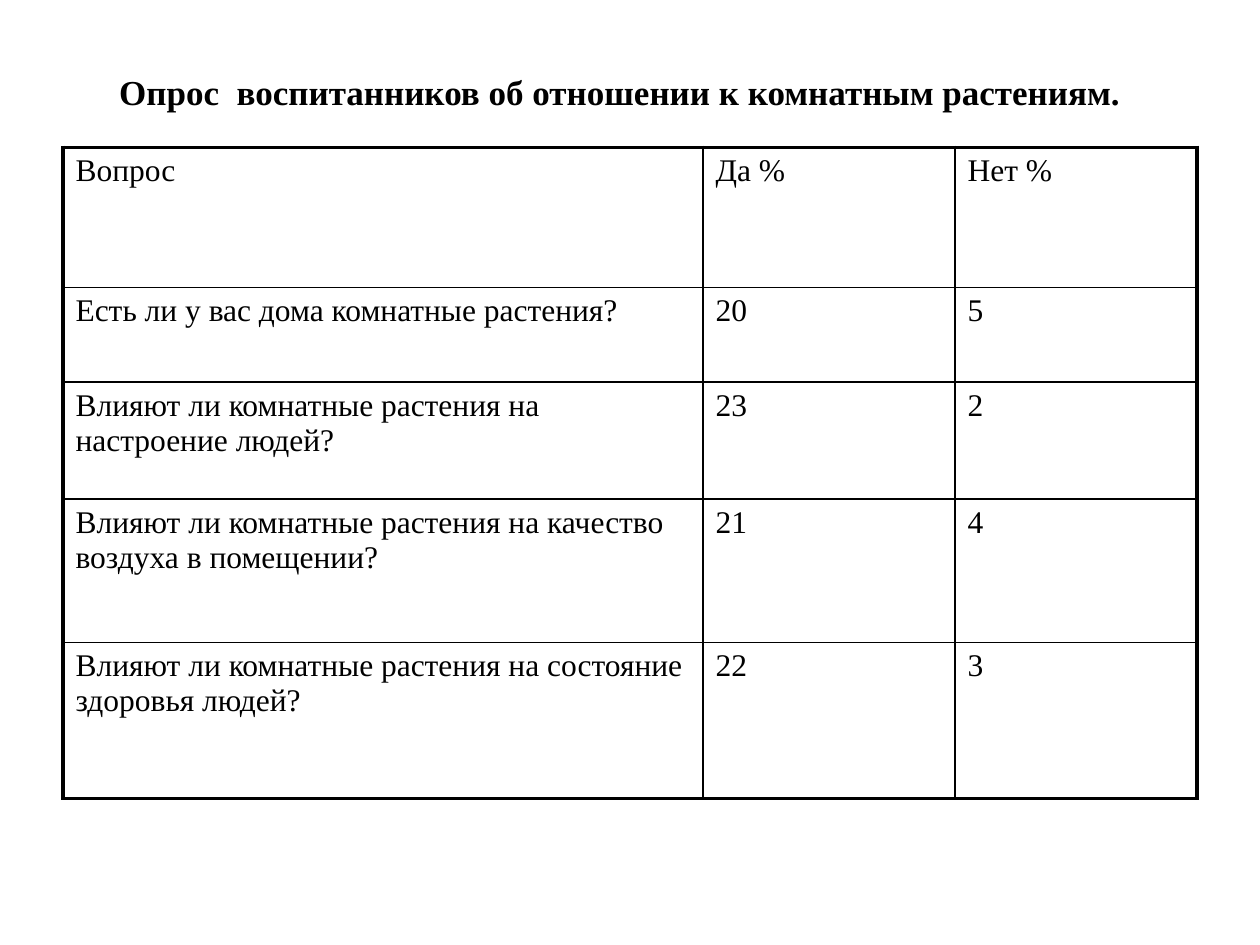
from lxml.etree import SubElement as Sub
from pptx import Presentation
from pptx.dml.color import RGBColor as Rgb
from pptx.enum.text import MSO_ANCHOR as Anchor, MSO_AUTO_SIZE as Fit, PP_ALIGN as Align
from pptx.oxml.ns import qn
from pptx.util import Inches, Pt

HUES = {"ink": "000000", "page": "FFFFFF"}
FONT = "Times New Roman"
COLS = [5.08, 2, 1.92]
ROWS = [1.11, 0.75, 0.93, 1.14, 1.24]
DATA = [
    ("Вопрос", "Да %", "Нет %"),
    ("Есть ли у вас дома комнатные растения?", "20", "5"),
    ("Влияют ли комнатные растения на настроение людей?", "23", "2"),
    ("Влияют ли комнатные растения на качество воздуха в помещении?", "21", "4"),
    ("Влияют ли комнатные растения на состояние здоровья людей?", "22", "3"),
]


def write(frame, text, size=18, bold=False, align=Align.LEFT):
    para = frame.paragraphs[0]
    para.alignment = align
    run = para.add_run()
    run.text = text
    run.font.name = FONT
    run.font.size = Pt(size)
    run.font.bold = bold
    run.font.color.rgb = Rgb.from_string(HUES["ink"])


def edge(cell, sides):
    props = cell._tc.get_or_add_tcPr()
    for side, thick in sides.items():
        line = Sub(props, qn(f"a:ln{side}"), w=str(Pt(2.25 if thick else 1)))
        fill = Sub(line, qn("a:solidFill"))
        Sub(fill, qn("a:srgbClr"), val=HUES["ink"])


def head(slide, box, text):
    title = slide.shapes.title
    title.left, title.top, title.width, title.height = map(Inches, box)
    frame = title.text_frame
    frame.auto_size = Fit.NONE
    frame.word_wrap = True
    frame.vertical_anchor = Anchor.BOTTOM
    frame.margin_right = Inches(0.26)
    frame.margin_top = 0
    frame.margin_bottom = Inches(0.03)
    write(frame, text, size=20, bold=True, align=Align.CENTER)


def grid(slide, box, cols, rows, data):
    table = slide.shapes.add_table(len(rows), len(cols), *map(Inches, box)).table
    table.first_row = table.horz_banding = False
    for col, width in zip(table.columns, cols):
        col.width = Inches(width)
    for row, height in zip(table.rows, rows):
        row.height = Inches(height)
    for r, line in enumerate(data):
        for c, text in enumerate(line):
            cell = table.cell(r, c)
            edge(cell, {"L": c == 0, "R": c == len(cols) - 1,
                        "T": r == 0, "B": r == len(rows) - 1})
            cell.fill.background()
            write(cell.text_frame, text)


def main():
    deck = Presentation()
    deck.slide_width, deck.slide_height = Inches(10), Inches(7.5)
    slide = deck.slides.add_slide(deck.slide_layouts[5])
    fill = slide.background.fill
    fill.solid()
    fill.fore_color.rgb = Rgb.from_string(HUES["page"])
    head(slide, (0.5, 0.3, 9, 0.62),
         "Опрос  воспитанников об отношении к комнатным растениям.")
    grid(slide, (0.5, 1.17, sum(COLS), sum(ROWS)), COLS, ROWS, DATA)
    deck.save("out.pptx")


if __name__ == "__main__":
    main()
